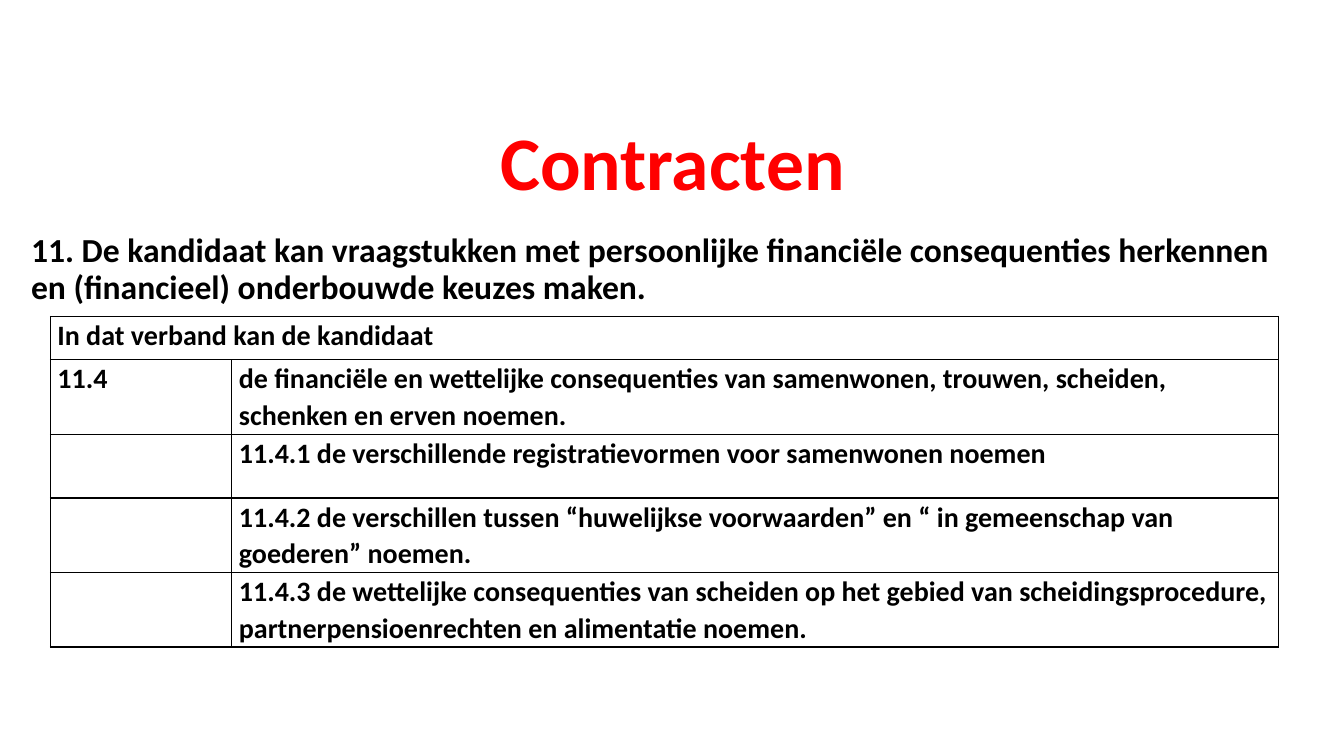
import pptx
import pptx.dml.color
import pptx.enum.text
import pptx.oxml
import pptx.oxml.ns
import pptx.util

Inches = pptx.util.Inches
Pt = pptx.util.Pt
RED = pptx.dml.color.RGBColor(0xFF, 0x00, 0x00)
BLACK = pptx.dml.color.RGBColor(0x00, 0x00, 0x00)
WHITE = pptx.dml.color.RGBColor(0xFF, 0xFF, 0xFF)

# Content
TITLE = "Contracten"
INTRO = ("11. De kandidaat kan vraagstukken met persoonlijke financiële consequenties "
         "herkennen en (financieel) onderbouwde keuzes maken.")
ROWS = [
    ("In dat verband kan de kandidaat", ""),
    ("11.4", "de financiële en wettelijke consequenties van samenwonen, trouwen, "
             "scheiden, schenken en erven noemen."),
    ("", "11.4.1 de verschillende registratievormen voor samenwonen noemen"),
    ("", "11.4.2 de verschillen tussen “huwelijkse voorwaarden” en “ in gemeenschap "
         "van goederen” noemen."),
    ("", "11.4.3 de wettelijke consequenties van scheiden op het gebied van "
         "scheidingsprocedure, partnerpensioenrechten en alimentatie noemen."),
]
COLUMN_WIDTHS = [1.8, 10.38]
ROW_HEIGHTS = [0.43, 0.74, 0.63, 0.74, 0.74]


def write(frame, text, size, color, spacing):
    frame.text = text
    para = frame.paragraphs[0]
    para.line_spacing = spacing
    for span in para.runs:
        span.font.name = "Calibri"
        span.font.size = Pt(size)
        span.font.bold = True
        span.font.color.rgb = color
    return para


def add_borders(cell):
    properties = cell._tc.get_or_add_tcPr()
    for side in ("lnL", "lnR", "lnT", "lnB"):
        properties.append(pptx.oxml.parse_xml(
            f'<a:{side} {pptx.oxml.ns.nsdecls("a")} w="{Pt(1)}"><a:solidFill>'
            f'<a:srgbClr val="{BLACK}"/></a:solidFill></a:{side}>'))


def main():
    deck = pptx.Presentation()
    deck.slide_width, deck.slide_height = Inches(13.33), Inches(7.5)
    page = deck.slides.add_slide(deck.slide_layouts[5])

    # Title
    title = page.shapes.title
    title.left, title.top = Inches(1.67), Inches(1.23)
    title.width, title.height = Inches(10), Inches(0.87)
    title.text_frame.vertical_anchor = pptx.enum.text.MSO_ANCHOR.BOTTOM
    heading = write(title.text_frame, TITLE, 54, RED, 0.9)
    heading.alignment = pptx.enum.text.PP_ALIGN.CENTER

    # Introduction
    box = page.shapes.add_textbox(Inches(0.21), Inches(2.27), Inches(12.79), Inches(4.22))
    box.text_frame.word_wrap = True
    write(box.text_frame, INTRO, 24, BLACK, 0.9)

    # Table of learning goals
    table = page.shapes.add_table(
        len(ROWS), len(COLUMN_WIDTHS), Inches(0.5), Inches(3.14),
        Inches(sum(COLUMN_WIDTHS)), Inches(sum(ROW_HEIGHTS))).table
    table.first_row = table.horz_banding = False
    for column, width in zip(table.columns, COLUMN_WIDTHS):
        column.width = Inches(width)
    for row, height, texts in zip(table.rows, ROW_HEIGHTS, ROWS):
        row.height = Inches(height)
        for cell, text in zip(row.cells, texts):
            cell.margin_left = cell.margin_right = Inches(0.07)
            cell.margin_top = cell.margin_bottom = 0
            add_borders(cell)
            cell.fill.solid()
            cell.fill.fore_color.rgb = WHITE
            if text:
                write(cell.text_frame, text, 20, BLACK, 1.07)
    table.cell(0, 0).merge(table.cell(0, 1))

    deck.save("out.pptx")


if __name__ == "__main__":
    main()
